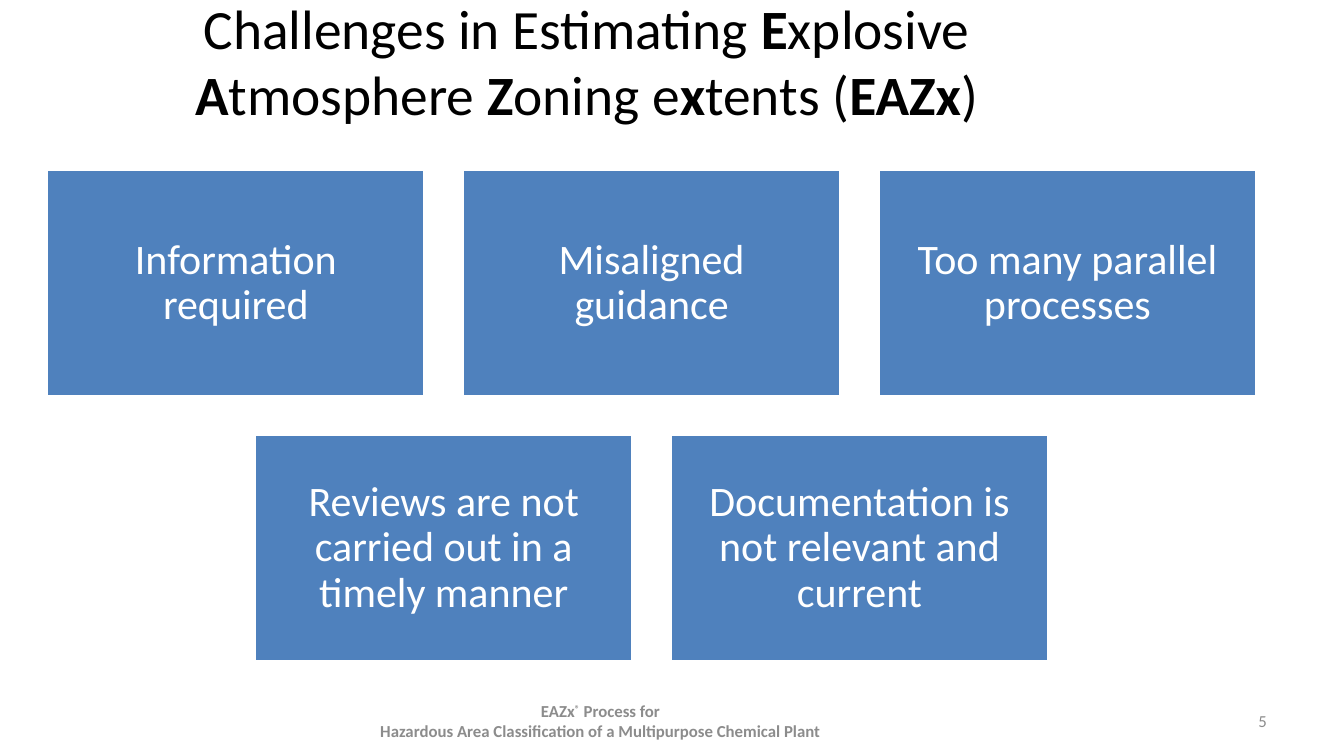
from pptx import Presentation
from pptx.dml.color import RGBColor
from pptx.enum.shapes import MSO_SHAPE
from pptx.enum.text import MSO_ANCHOR, PP_ALIGN
from pptx.util import Pt

BLACK = RGBColor(0x00, 0x00, 0x00)
WHITE = RGBColor(0xFF, 0xFF, 0xFF)
GREY = RGBColor(0x8C, 0x8C, 0x8C)
BLUE = RGBColor(0x4F, 0x81, 0xBD)

TITLE = [
    ("Challenges in Estimating ", False), ("E", True), ("xplosive ", False),
    ("A", True), ("tmosphere ", False), ("Z", True), ("oning e", False),
    ("x", True), ("tents (", False), ("EAZx", True), (")", False),
]
CHALLENGES = [
    ["Information required", "Misaligned guidance", "Too many parallel processes"],
    ["Reviews are not carried out in a timely manner",
     "Documentation is not relevant and current"],
]


def style_paragraph(para, size, color, align):
    """Set the font and alignment shared by all runs of a paragraph."""
    para.alignment = align
    para.font.name = "Calibri"
    para.font.size = Pt(size)
    para.font.color.rgb = color


def add_label(page, box, size, color, align):
    """Add an empty wrapped text box and return its styled first paragraph."""
    frame = page.shapes.add_textbox(*map(Pt, box)).text_frame
    frame.word_wrap = True
    frame.vertical_anchor = MSO_ANCHOR.MIDDLE
    para = frame.paragraphs[0]
    style_paragraph(para, size, color, align)
    return para


def add_title(page, box):
    """Write the title with the letters of the acronym in bold."""
    para = add_label(page, box, 39.6, BLACK, PP_ALIGN.CENTER)
    for text, bold in TITLE:
        span = para.add_run()
        span.text = text
        span.font.bold = bold


def add_card(page, box, text):
    """Draw one blue card with its centred text."""
    card = page.shapes.add_shape(MSO_SHAPE.RECTANGLE, *map(Pt, box))
    card.shadow.inherit = False
    card.fill.solid()
    card.fill.fore_color.rgb = BLUE
    card.line.color.rgb = WHITE
    card.line.width = Pt(2)
    frame = card.text_frame
    frame.word_wrap = True
    frame.vertical_anchor = MSO_ANCHOR.MIDDLE
    frame.margin_left = frame.margin_right = Pt(11.5)
    frame.margin_top = frame.margin_bottom = Pt(11.5)
    para = frame.paragraphs[0]
    para.text = text
    para.line_spacing = 0.9
    style_paragraph(para, 30, WHITE, PP_ALIGN.CENTER)


def add_challenges(page, box, gap=27):
    """Fill the box with rows of equal cards, each row centred."""
    left, top, width, height = box
    columns = max(map(len, CHALLENGES))
    card_width = (width - gap * (columns - 1)) / columns
    card_height = (height - gap * (len(CHALLENGES) - 1)) / len(CHALLENGES)
    for row, texts in enumerate(CHALLENGES):
        indent = (columns - len(texts)) * (card_width + gap) / 2
        for column, text in enumerate(texts):
            place = (left + indent + column * (card_width + gap),
                     top + row * (card_height + gap), card_width, card_height)
            add_card(page, place, text)


def add_footer(page, box, number_width=224):
    """Write the process name and, at the right end, the slide number."""
    left, top, width, height = box
    name_width = width - number_width
    para = add_label(page, (left, top, name_width, height), 12, GREY, PP_ALIGN.CENTER)
    para.font.bold = True
    para.add_run().text = "EAZx"
    mark = para.add_run()
    mark.text = "®"
    mark._r.get_or_add_rPr().set("baseline", "30000")
    para.add_run().text = " Process for"
    para.add_line_break()
    para.add_run().text = "Hazardous Area Classification of a Multipurpose Chemical Plant"
    number_box = (left + name_width, top, number_width, height)
    number = add_label(page, number_box, 12, GREY, PP_ALIGN.RIGHT)
    number.add_run().text = "5"


def main():
    """Build the slide and save the deck."""
    deck = Presentation()
    deck.slide_width, deck.slide_height = Pt(960), Pt(540)
    page = deck.slides.add_slide(deck.slide_layouts[6])
    add_title(page, (48, 16.5, 742, 53))
    add_challenges(page, (33.5, 121.5, 864, 351))
    add_footer(page, (170, 500.5, 742, 29))
    deck.save("out.pptx")


if __name__ == "__main__":
    main()
